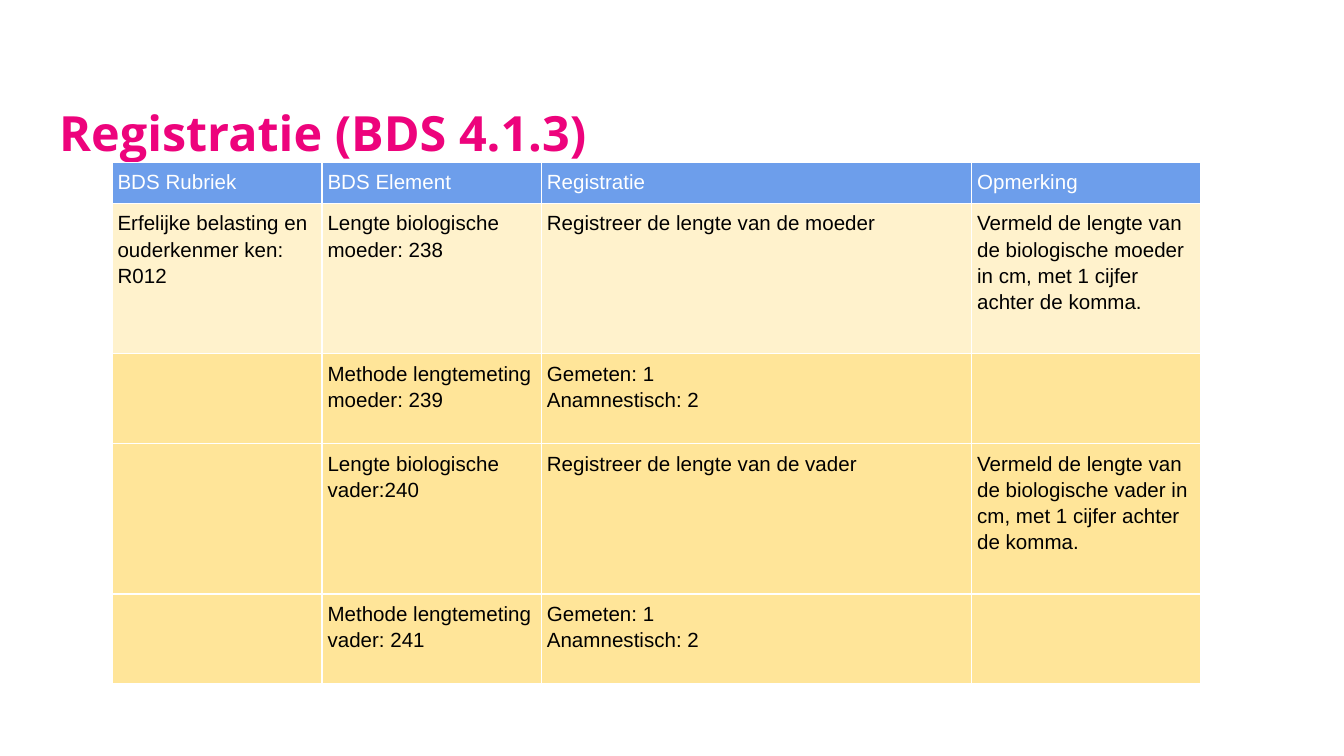
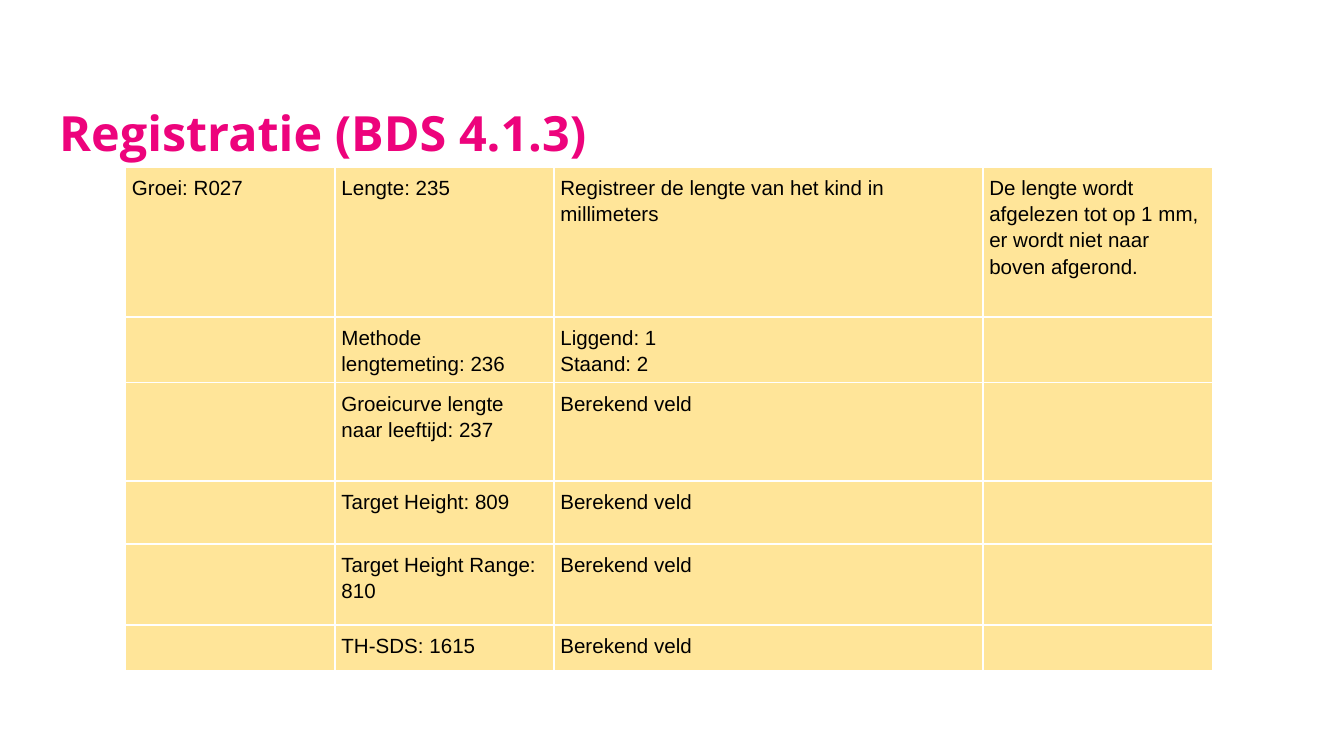
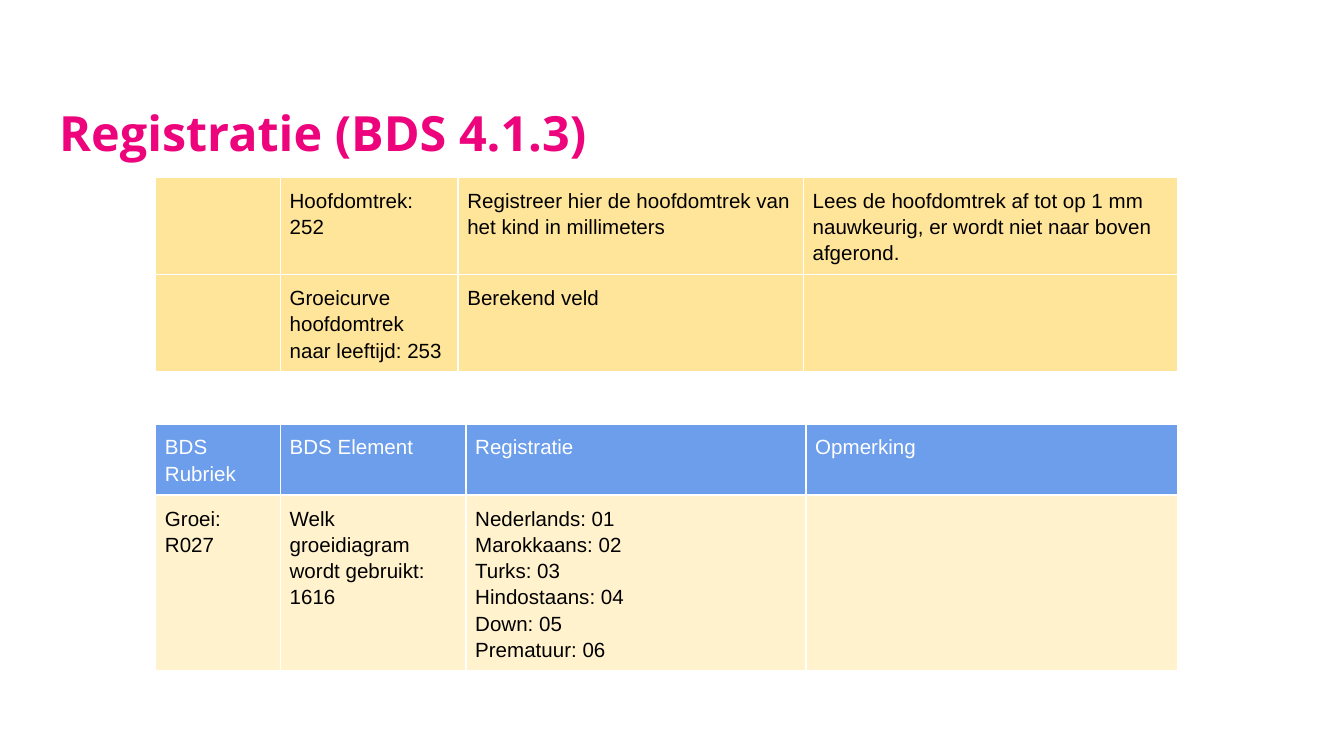
from lxml.etree import SubElement
from pptx import Presentation
from pptx.dml.color import RGBColor
from pptx.enum.text import MSO_ANCHOR, MSO_AUTO_SIZE, PP_ALIGN
from pptx.oxml.ns import qn
from pptx.util import Pt

PINK = RGBColor(0xED, 0x03, 0x7C)
BLUE = RGBColor(0x6D, 0x9E, 0xEB)
CREAM = RGBColor(0xFF, 0xF2, 0xCC)
AMBER = RGBColor(0xFF, 0xE5, 0x99)
WHITE = RGBColor(0xFF, 0xFF, 0xFF)
BLACK = RGBColor(0, 0, 0)
SIZE = 11
HEAD = ["BDS Rubriek", "BDS Element", "Registratie", "Opmerking"]
FIELD = "Berekend veld"
METHOD = "Gemeten: 1\nAnamnestisch: 2"

PARENTS = [
    HEAD,
    ["Erfelijke belasting en ouderkenmer ken: R012", "Lengte biologische moeder: 238",
     "Registreer de lengte van de moeder",
     "Vermeld de lengte van de biologische moeder in cm, met 1 cijfer achter de komma."],
    ["", "Methode lengtemeting moeder: 239", METHOD, ""],
    ["", "Lengte biologische vader:240", "Registreer de lengte van de vader",
     "Vermeld de lengte van de biologische vader in cm, met 1 cijfer achter de komma."],
    ["", "Methode lengtemeting vader: 241", METHOD, ""],
]
GROWTH = [
    ["Groei: R027", "Lengte: 235", "Registreer de lengte van het kind in millimeters",
     "De lengte wordt afgelezen tot op 1 mm, er wordt niet naar boven afgerond."],
    ["", "Methode lengtemeting: 236", "Liggend: 1\nStaand: 2", ""],
    ["", "Groeicurve lengte naar leeftijd: 237", FIELD, ""],
    ["", "Target Height: 809", FIELD, ""],
    ["", "Target Height Range: 810", FIELD, ""],
    ["", "TH-SDS: 1615", FIELD, ""],
]
SKULL = [
    ["", "Hoofdomtrek: 252", "Registreer hier de hoofdomtrek van het kind in millimeters",
     "Lees de hoofdomtrek af tot op 1 mm nauwkeurig, er wordt niet naar boven afgerond."],
    ["", "Groeicurve hoofdomtrek naar leeftijd: 253", FIELD, ""],
]
CHARTS = [
    HEAD,
    ["Groei: R027", "Welk groeidiagram wordt gebruikt: 1616",
     "Nederlands: 01\nMarokkaans: 02\nTurks: 03\nHindostaans: 04\nDown: 05\nPrematuur: 06", ""],
]


def add_page(deck):
    """Add a slide with the shared title."""
    slide = deck.slides.add_slide(deck.slide_layouts[5])
    title = slide.shapes.title
    title.left, title.top, title.width, title.height = Pt(24.5), Pt(48.2), Pt(635.8), Pt(51.8)
    frame = title.text_frame
    frame.text = "Registratie (BDS 4.1.3)"
    frame.auto_size = MSO_AUTO_SIZE.NONE
    frame.vertical_anchor = MSO_ANCHOR.TOP
    frame.margin_left = frame.margin_right = frame.margin_top = frame.margin_bottom = Pt(7.2)
    line = frame.paragraphs[0]
    line.alignment = PP_ALIGN.LEFT
    font = line.runs[0].font
    font.name, font.size, font.bold = "Open Sans", Pt(26), True
    font.color.rgb = PINK
    return slide


def add_edges(cell):
    """Draw thin white lines on all sides of a cell."""
    props = cell._tc.get_or_add_tcPr()
    for side in ("lnL", "lnR", "lnT", "lnB"):
        edge = SubElement(props, qn(f"a:{side}"), w=str(Pt(1)))
        fill = SubElement(edge, qn("a:solidFill"))
        SubElement(fill, qn("a:srgbClr"), val=str(WHITE))


def fill_cell(cell, text, inset, fill, ink):
    """Write and format one cell."""
    cell.margin_left = cell.margin_right = cell.margin_top = cell.margin_bottom = Pt(inset)
    add_edges(cell)
    cell.fill.solid()
    cell.fill.fore_color.rgb = fill
    cell.text_frame.text = text
    for line in cell.text_frame.paragraphs:
        line.line_spacing = 1.15
        for run in line.runs:
            run.font.name, run.font.size = "Arial", Pt(SIZE)
            run.font.color.rgb = ink
        if not line.runs:
            SubElement(line._p, qn("a:endParaRPr"), sz=str(SIZE * 100))


def add_grid(slide, left, top, widths, heights, rows, inset):
    """Add a table; a heading row is blue and the row under it is cream."""
    shape = slide.shapes.add_table(len(rows), len(widths), Pt(left), Pt(top),
                                   Pt(sum(widths)), Pt(sum(heights)))
    table = shape.table
    table.first_row = table.horz_banding = False
    for column, width in zip(table.columns, widths):
        column.width = Pt(width)
    for row, height in zip(table.rows, heights):
        row.height = Pt(height)
    fills = [BLUE, CREAM] if rows[0] is HEAD else []
    fills += [AMBER] * (len(rows) - len(fills))
    for row, texts, fill in zip(table.rows, rows, fills):
        ink = WHITE if fill == BLUE else BLACK
        for cell, text in zip(row.cells, texts):
            fill_cell(cell, text, inset, fill, ink)
    return table


def main():
    """Build the three slides."""
    deck = Presentation()
    deck.slide_width, deck.slide_height = Pt(720), Pt(405)
    add_grid(add_page(deck), 60, 87, [112.5, 117.5, 230.5, 123],
             [22, 80.5, 48.2, 80.5, 48.2], PARENTS, 3)
    add_grid(add_page(deck), 67.2, 89.4, [112.2, 117.3, 229.8, 123],
             [80.5, 34.6, 52.6, 33.8, 43.4, 24.5], GROWTH, 3.5)
    last = add_page(deck)
    add_grid(last, 83.4, 94.8, [66.8, 95.2, 185, 200.5], [51.8, 51.8], SKULL, 5)
    charts = add_grid(last, 83.4, 227, [66.8, 99.4, 182.2, 199.1], [37.6, 94], CHARTS, 5)
    for line in charts.cell(1, 2).text_frame.paragraphs:
        line.alignment = PP_ALIGN.JUSTIFY
    deck.save("out.pptx")


if __name__ == "__main__":
    main()
